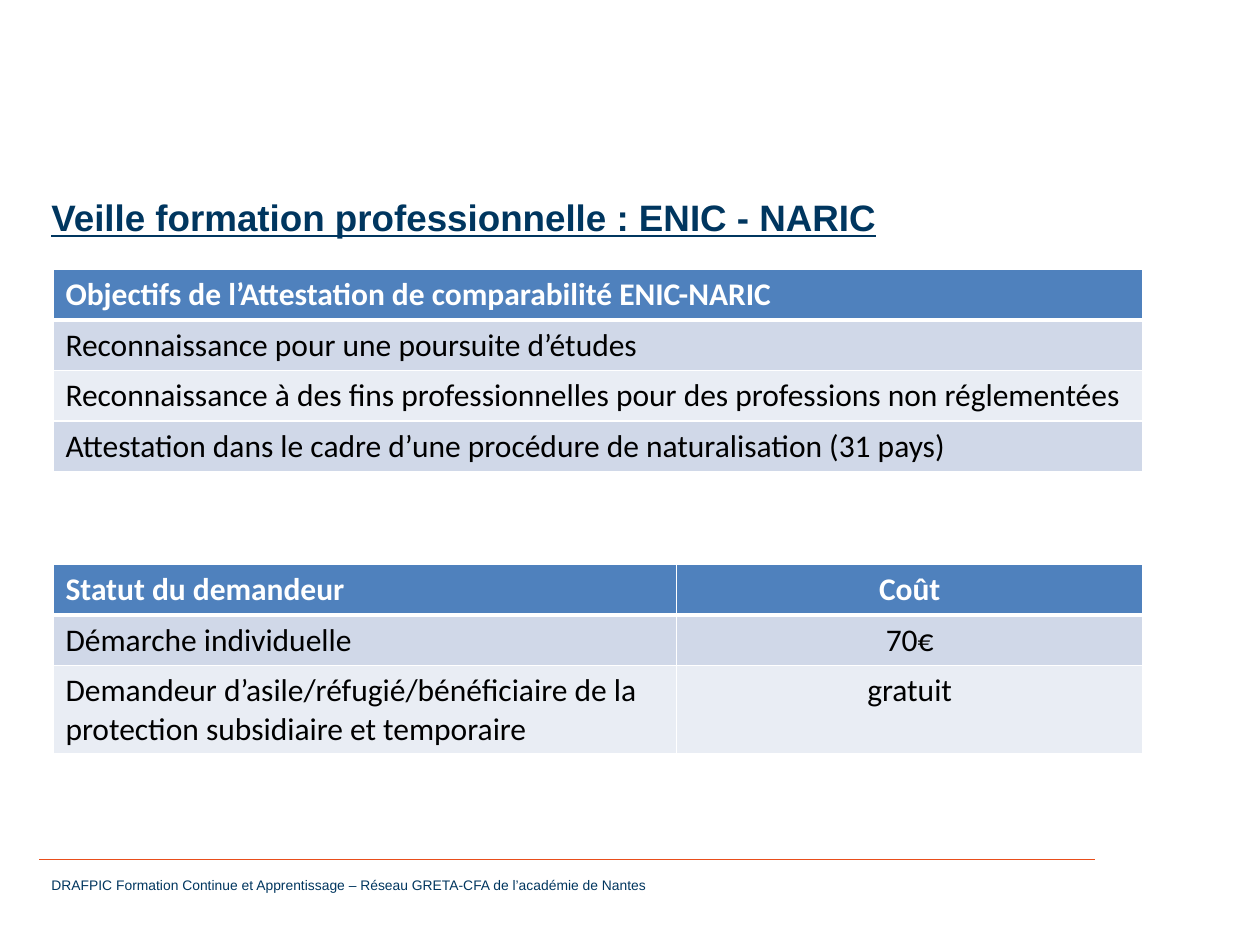
import pptx
import pptx.dml.color
import pptx.enum.shapes
import pptx.enum.text
import pptx.oxml
import pptx.oxml.ns
import pptx.util
from pptx.util import Inches

NAVY = pptx.dml.color.RGBColor(0x00, 0x36, 0x5F)
ORANGE = pptx.dml.color.RGBColor(0xE9, 0x4E, 0x1B)
WHITE = pptx.dml.color.RGBColor(0xFF, 0xFF, 0xFF)
BLACK = pptx.dml.color.RGBColor(0x00, 0x00, 0x00)
HEADER_BLUE = pptx.dml.color.RGBColor(0x4F, 0x81, 0xBD)
BAND_DARK = pptx.dml.color.RGBColor(0xD0, 0xD8, 0xE8)
BAND_LIGHT = pptx.dml.color.RGBColor(0xE9, 0xED, 0xF4)


def write_text(text_frame, text, size, color, font="Arial", bold=False,
               underline=False, centered=False):
    text_frame.word_wrap = True
    paragraph = text_frame.paragraphs[0]
    if centered:
        paragraph.alignment = pptx.enum.text.PP_ALIGN.CENTER
    run = paragraph.add_run()
    run.text = text
    run.font.name = font
    run.font.size = pptx.util.Pt(size)
    run.font.bold = bold
    run.font.underline = underline
    run.font.color.rgb = color


def add_border(cell, side, width):
    cell._tc.get_or_add_tcPr().append(pptx.oxml.parse_xml(
        f'<a:{side} {pptx.oxml.ns.nsdecls("a")} w="{pptx.util.Pt(width)}">'
        f'<a:solidFill><a:srgbClr val="{WHITE}"/></a:solidFill></a:{side}>'))


presentation = pptx.Presentation()
presentation.slide_width = Inches(10)
presentation.slide_height = Inches(7.5)
slide = presentation.slides.add_slide(presentation.slide_layouts[6])

# Footer rule
rule = slide.shapes.add_connector(
    pptx.enum.shapes.MSO_CONNECTOR.STRAIGHT,
    Inches(0.31), Inches(6.82), Inches(8.69), Inches(6.82))
rule.line.color.rgb = ORANGE
rule.line.width = pptx.util.Pt(0.25)
rule._element.spPr.append(
    pptx.oxml.parse_xml(f'<a:effectLst {pptx.oxml.ns.nsdecls("a")}/>'))

# Footer and title
footer = slide.shapes.add_textbox(Inches(0.31), Inches(6.91), Inches(6.19), Inches(0.23))
write_text(footer.text_frame,
           "DRAFPIC Formation Continue et Apprentissage – Réseau GRETA-CFA de l’académie de Nantes",
           size=7.9, color=NAVY)
title = slide.shapes.add_textbox(Inches(0.31), Inches(1.5), Inches(9.94), Inches(0.45))
write_text(title.text_frame, "Veille formation professionnelle : ENIC - NARIC",
           size=21, color=NAVY, bold=True, underline=True)

# Tables: top, column widths, row heights, rows of text
tables = [
    (2.14, [8.65], [0.4] * 4, [
        ["Objectifs de l’Attestation de comparabilité ENIC-NARIC"],
        ["Reconnaissance pour une poursuite d’études"],
        ["Reconnaissance à des fins professionnelles pour des professions non réglementées"],
        ["Attestation dans le cadre d’une procédure de naturalisation (31 pays)"],
    ]),
    (4.48, [4.95, 3.7], [0.4, 0.4, 0.7], [
        ["Statut du demandeur", "Coût"],
        ["Démarche individuelle", "70€"],
        ["Demandeur d’asile/réfugié/bénéficiaire de la protection subsidiaire et temporaire",
         "gratuit"],
    ]),
]
for top, widths, heights, rows in tables:
    table = slide.shapes.add_table(
        len(rows), len(widths), Inches(0.42), Inches(top),
        Inches(sum(widths)), Inches(sum(heights))).table
    for column, width in zip(table.columns, widths):
        column.width = Inches(width)
    for row_index, texts in enumerate(rows):
        table.rows[row_index].height = Inches(heights[row_index])
        is_header = row_index == 0
        band = BAND_DARK if row_index % 2 else BAND_LIGHT
        for column_index, text in enumerate(texts):
            cell = table.cell(row_index, column_index)
            write_text(cell.text_frame, text, size=18, font="Calibri", bold=is_header,
                       color=WHITE if is_header else BLACK, centered=column_index == 1)
            # The thick edge lies between the header and the first body row
            add_border(cell, "lnL", 1)
            add_border(cell, "lnR", 1)
            add_border(cell, "lnT", 3 if row_index == 1 else 1)
            add_border(cell, "lnB", 3 if is_header else 1)
            cell.fill.solid()
            cell.fill.fore_color.rgb = HEADER_BLUE if is_header else band

presentation.save("out.pptx")
